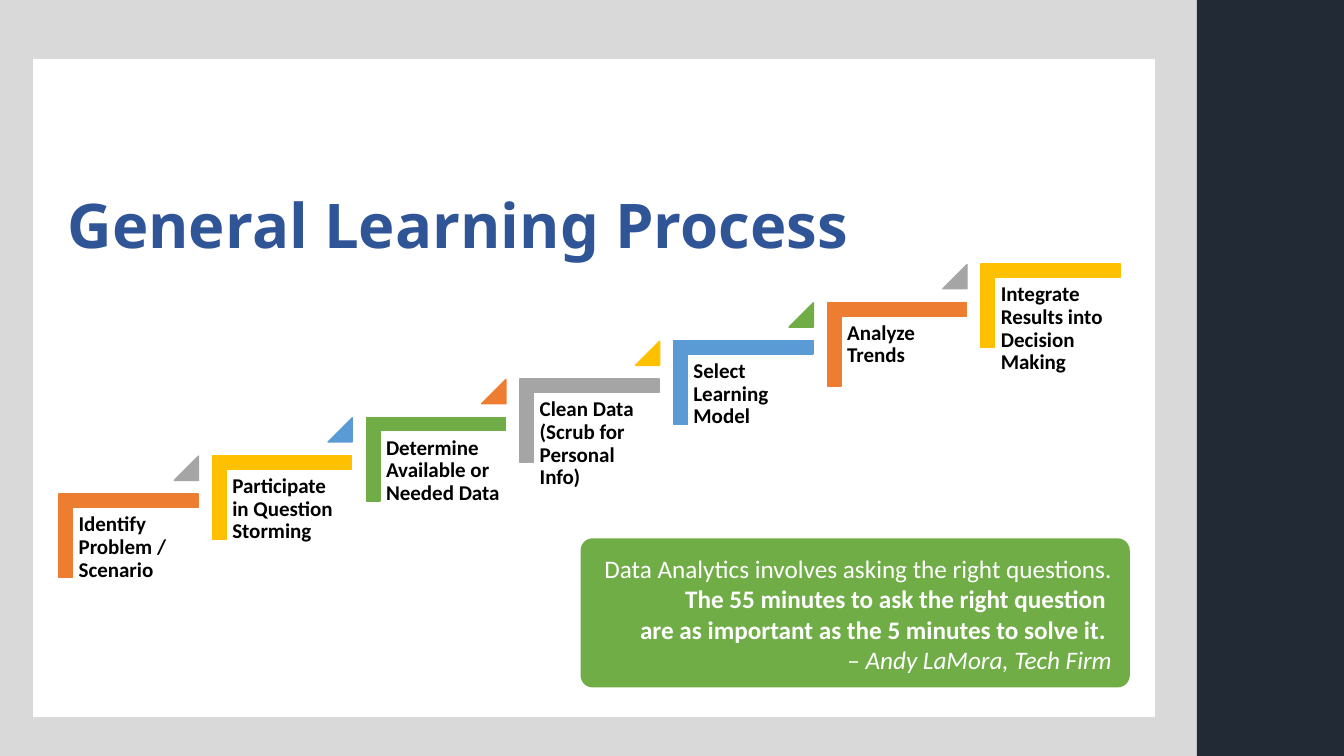
"""Build the General Learning Process slide with a rising staircase of steps."""
from pptx import Presentation
from pptx import util as u
from pptx.dml.color import RGBColor
from pptx.enum import shapes, text

PX = 4572
LIGHT_GREY = RGBColor(0xD9, 0xD9, 0xD9)
WHITE = RGBColor(0xFF, 0xFF, 0xFF)
BLACK = RGBColor(0x00, 0x00, 0x00)
NAVY = RGBColor(0x22, 0x2A, 0x35)
TITLE_BLUE = RGBColor(0x2F, 0x55, 0x97)
ORANGE = RGBColor(0xED, 0x7D, 0x31)
GREY = RGBColor(0xA5, 0xA5, 0xA5)
GOLD = RGBColor(0xFF, 0xC0, 0x00)
BLUE = RGBColor(0x5B, 0x9B, 0xD5)
GREEN = RGBColor(0x70, 0xAD, 0x47)

STEP_ACROSS, STEP_UP = 305, 76
STEPS = [
    "Identify Problem / Scenario",
    "Participate in Question Storming",
    "Determine Available or Needed Data",
    "Clean Data (Scrub for Personal Info)",
    "Select Learning Model",
    "Analyze Trends",
    "Integrate Results into Decision Making",
]
STAIR_COLOURS = [ORANGE, GREY, GOLD, BLUE, GREEN]
QUOTE = [
    [("Data Analytics involves asking the right questions. ", False, False),
     ("The 55 minutes to ask the right question ", True, False)],
    [("are as important as the 5 minutes to solve it. ", True, False)],
    [("– ", False, False), ("Andy LaMora, Tech Firm", False, True)],
]


def box(left, top, width, height):
    """Convert a px box to EMU."""
    return [u.Emu(value * PX) for value in (left, top, width, height)]


def add_block(slide, kind, place, colour, adjustments=(), outlined=False):
    """Add a filled preset shape, with a matching outline if asked."""
    shape = slide.shapes.add_shape(kind, *box(*place))
    shape.shadow.inherit = False
    shape.fill.solid()
    shape.fill.fore_color.rgb = colour
    if outlined:
        shape.line.color.rgb = colour
        shape.line.width = u.Pt(1)
    else:
        shape.line.fill.background()
    for index, value in enumerate(adjustments):
        shape.adjustments[index] = value
    return shape


def add_run(paragraph, words, size, colour, bold=False, italic=False, font="Calibri"):
    """Add one formatted run."""
    run = paragraph.add_run()
    run.text = words
    run.font.name = font
    run.font.size = u.Pt(size)
    run.font.bold = bold
    run.font.italic = italic
    run.font.color.rgb = colour


def add_text_box(slide, place):
    """Add a wrapping text box and return its frame."""
    frame = slide.shapes.add_textbox(*box(*place)).text_frame
    frame.word_wrap = True
    return frame


def add_background(slide):
    """Add the grey page, white panel and dark side band."""
    for place, colour in (
        ((0, 0, 2376, 1500), LIGHT_GREY),
        ((66, 117, 2226, 1306), WHITE),
        ((2375, 0, 292, 1500), NAVY),
    ):
        add_block(slide, shapes.MSO_SHAPE.RECTANGLE, place, colour)


def add_title(slide):
    """Place and format the title above the background."""
    title = slide.shapes.title
    slide.shapes._spTree.append(title._element)
    title.left, title.top, title.width, title.height = box(114, 328, 2108, 252)
    frame = title.text_frame
    frame.auto_size = text.MSO_AUTO_SIZE.NONE
    frame.vertical_anchor = text.MSO_ANCHOR.MIDDLE
    paragraph = frame.paragraphs[0]
    paragraph.alignment = text.PP_ALIGN.LEFT
    paragraph.line_spacing = 0.9
    add_run(paragraph, "General Learning Process", 44, TITLE_BLUE, True, font="Noto Sans")


def add_step(slide, index, label):
    """Add one stair with its label and, below the top, its triangle."""
    across, up = index * STEP_ACROSS, index * STEP_UP
    colours = [STAIR_COLOURS[(2 * index + k) % len(STAIR_COLOURS)] for k in (0, 1)]
    corner = add_block(slide, shapes.MSO_SHAPE.CORNER, (172 + across, 925 - up, 166, 276),
                       colours[0], (0.161, 0.161), True)
    corner.rotation = 90
    frame = add_text_box(slide, (144 + across, 1007 - up, 250, 218))
    frame.margin_left = frame.margin_right = u.Inches(0.06)
    frame.margin_top = frame.margin_bottom = u.Inches(0.06)
    paragraph = frame.paragraphs[0]
    paragraph.line_spacing = 0.9
    add_run(paragraph, label, 15, BLACK, True)
    if index < len(STEPS) - 1:
        add_block(slide, shapes.MSO_SHAPE.ISOSCELES_TRIANGLE,
                  (346 + across, 905 - up, 48, 48), colours[1], (1,), True)


def add_quote(slide):
    """Add the green panel and its right-aligned quotation."""
    add_block(slide, shapes.MSO_SHAPE.ROUNDED_RECTANGLE, (1152, 1068, 1090, 296),
              GREEN, (0.082,))
    paragraph = add_text_box(slide, (1170, 1088, 1056, 262)).paragraphs[0]
    paragraph.alignment = text.PP_ALIGN.RIGHT
    for number, line in enumerate(QUOTE):
        if number:
            paragraph.add_line_break()
        for words, bold, italic in line:
            add_run(paragraph, words, 18, WHITE, bold, italic)


def main():
    """Build and save the slide."""
    presentation = Presentation()
    presentation.slide_width, presentation.slide_height = u.Emu(2667 * PX), u.Emu(1500 * PX)
    slide = presentation.slides.add_slide(presentation.slide_layouts[5])
    add_background(slide)
    add_title(slide)
    for index, label in enumerate(STEPS):
        add_step(slide, index, label)
    add_quote(slide)
    presentation.save("out.pptx")


if __name__ == "__main__":
    main()
